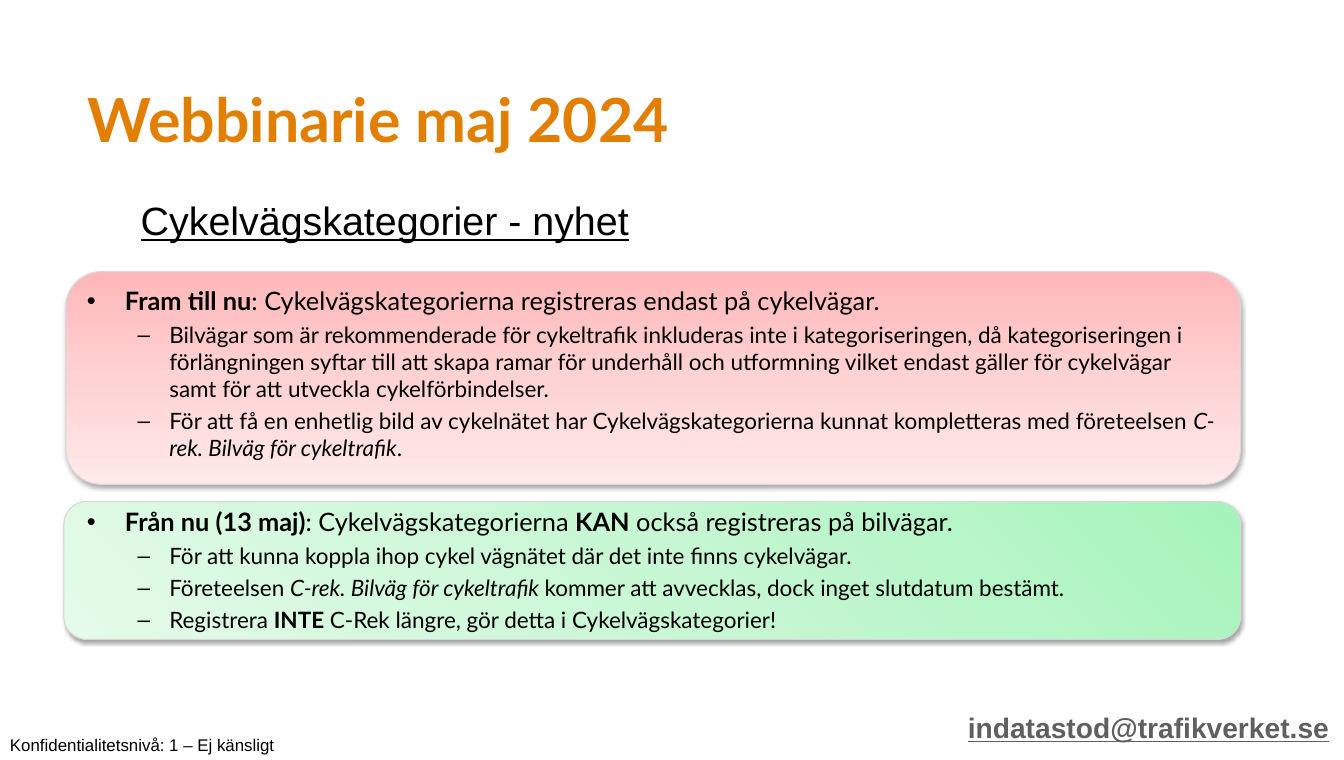
from pptx import Presentation
from pptx.dml.color import RGBColor
from pptx.enum.shapes import MSO_SHAPE
from pptx.oxml import parse_xml
from pptx.oxml.ns import nsdecls
from pptx.util import Pt
from lxml.etree import SubElement

ORANGE = RGBColor(0xE2, 0x7F, 0x00)
BLACK = RGBColor(0x00, 0x00, 0x00)
GREY = RGBColor(0x5F, 0x5F, 0x5F)
BORDER = RGBColor(0xD8, 0xD8, 0xD8)
REDS = [RGBColor(0xFF, 0xB7, 0xB9), RGBColor(0xFF, 0xD2, 0xD3), RGBColor(0xFF, 0xE9, 0xE9)]
GREENS = [RGBColor(0xA6, 0xF4, 0xBB), RGBColor(0xC8, 0xF7, 0xD4), RGBColor(0xE4, 0xFB, 0xE9)]

# Bullet, left margin, hanging indent and text size of each level
LEVELS = [("•", 27, 27, 18), ("–", 58.5, 22.5, 16)]

# Paragraphs as (level, runs); a run is (text, style), where b is bold and i italic
BEFORE = [
    (0, [("Fram till nu", "b"),
         (": Cykelvägskategorierna registreras endast på cykelvägar.", "")]),
    (1, [("Bilvägar som är rekommenderade för cykeltrafik inkluderas inte i kategoriseringen, "
          "då kategoriseringen i förlängningen syftar till att skapa ramar för underhåll och "
          "utformning vilket endast gäller för cykelvägar samt för att utveckla "
          "cykelförbindelser.", "")]),
    (1, [("För att få en enhetlig bild av cykelnätet har Cykelvägskategorierna kunnat "
          "kompletteras med företeelsen ", ""),
         ("C-rek. Bilväg för cykeltrafik", "i"), (".", "")]),
]
FROM_NOW = [
    (0, [("Från nu (13 maj)", "b"), (": Cykelvägskategorierna ", ""), ("KAN", "b"),
         (" också registreras på bilvägar.", "")]),
    (1, [("För att kunna koppla ihop cykel vägnätet där det inte finns cykelvägar.", "")]),
    (1, [("Företeelsen ", ""), ("C-rek. Bilväg för cykeltrafik ", "i"),
         ("kommer att avvecklas, dock inget slutdatum bestämt.", "")]),
    (1, [("Registrera ", ""), ("INTE", "b"),
         (" C-Rek längre, gör detta i Cykelvägskategorier!", "")]),
]


def add_frame(slide, box):
    frame = slide.shapes.add_textbox(*map(Pt, box)).text_frame
    frame.word_wrap = True
    return frame


def add_line(slide, box, text, font_name, size, color, bold=False, underline=False):
    frame = add_frame(slide, box)
    frame.text = text
    font = frame.paragraphs[0].runs[0].font
    font.name, font.size, font.bold, font.underline = font_name, Pt(size), bold, underline
    font.color.rgb = color


def add_card(slide, box, colors, angle):
    card = slide.shapes.add_shape(MSO_SHAPE.ROUNDED_RECTANGLE, *map(Pt, box))
    card.line.color.rgb = BORDER
    card.line.width = Pt(0.75)
    card.shadow.inherit = False

    # Three-stop gradient, placed right before the outline
    stops = "".join(f'<a:gs pos="{i * 50000}"><a:srgbClr val="{color}"/></a:gs>'
                    for i, color in enumerate(colors))
    properties = card.element.spPr
    properties.find("{*}ln").addprevious(parse_xml(
        f'<a:gradFill {nsdecls("a")} rotWithShape="1"><a:gsLst>{stops}</a:gsLst>'
        f'<a:lin ang="{angle * 60000}" scaled="0"/></a:gradFill>'))

    # Soft shadow below the card
    properties.find("{*}effectLst").append(parse_xml(
        f'<a:outerShdw {nsdecls("a")} blurRad="{Pt(3.1)}" dist="{Pt(1.8)}" dir="5400000" '
        f'rotWithShape="0"><a:srgbClr val="{BLACK}"><a:alpha val="35000"/></a:srgbClr>'
        '</a:outerShdw>'))


def add_bullets(slide, box, paragraphs):
    frame = add_frame(slide, box)
    for index, (level, runs) in enumerate(paragraphs):
        paragraph = frame.paragraphs[0] if index == 0 else frame.add_paragraph()
        bullet, margin, hanging, size = LEVELS[level]
        paragraph.level = level
        if index:
            paragraph.space_before = Pt(3.6)
        settings = paragraph._p.get_or_add_pPr()
        settings.set("marL", str(Pt(margin)))
        settings.set("indent", str(-Pt(hanging)))
        namespace = settings.nsmap["a"]
        SubElement(settings, f"{{{namespace}}}buFont").set("typeface", "Arial")
        SubElement(settings, f"{{{namespace}}}buChar").set("char", bullet)
        for text, style in runs:
            run = paragraph.add_run()
            run.text = text
            font = run.font
            font.name, font.size = "Lato", Pt(size)
            font.bold, font.italic = style == "b", style == "i"
            font.color.rgb = BLACK


def add_panel(slide, box, text_inset, colors, angle, paragraphs):
    left, top, width, height = box
    inset_left, inset_top = text_inset
    add_card(slide, box, colors, angle)
    add_bullets(slide, (left + inset_left, top + inset_top, 815.8, height - inset_top),
                paragraphs)


def add_heading(slide, box):
    left, top, width, height = box
    add_line(slide, (left, top, width, 48.2), "Webbinarie maj 2024", "Lato", 43.2, ORANGE,
             bold=True)
    add_line(slide, (left + 37.5, top + 81.4, 654.5, 41), "Cykelvägskategorier - nyhet",
             "Arial", 28, BLACK, underline=True)


def add_footer(slide, box):
    left, top, width, height = box
    add_line(slide, (left + width - 274.3, top, 274.3, 31.7), "indatastod@trafikverket.se",
             "Arial", 20, GREY, bold=True, underline=True)
    add_line(slide, (left, top + height - 21.6, 298, 21.6),
             "Konfidentialitetsnivå: 1 – Ej känsligt", "Arial", 12, BLACK)


def main():
    deck = Presentation()
    deck.slide_width, deck.slide_height = Pt(954.7), Pt(540)
    slide = deck.slides.add_slide(deck.slide_layouts[6])
    add_heading(slide, (55.4, 54.7, 766, 122.4))
    add_panel(slide, (46.8, 193, 834.5, 151.2), (7.9, 6.4), REDS, 90, BEFORE)
    add_panel(slide, (45.4, 356.4, 835.9, 97.9), (9.3, 0), GREENS, 135, FROM_NOW)
    add_footer(slide, (0, 501.1, 954.7, 38.9))
    deck.save("out.pptx")


if __name__ == "__main__":
    main()
